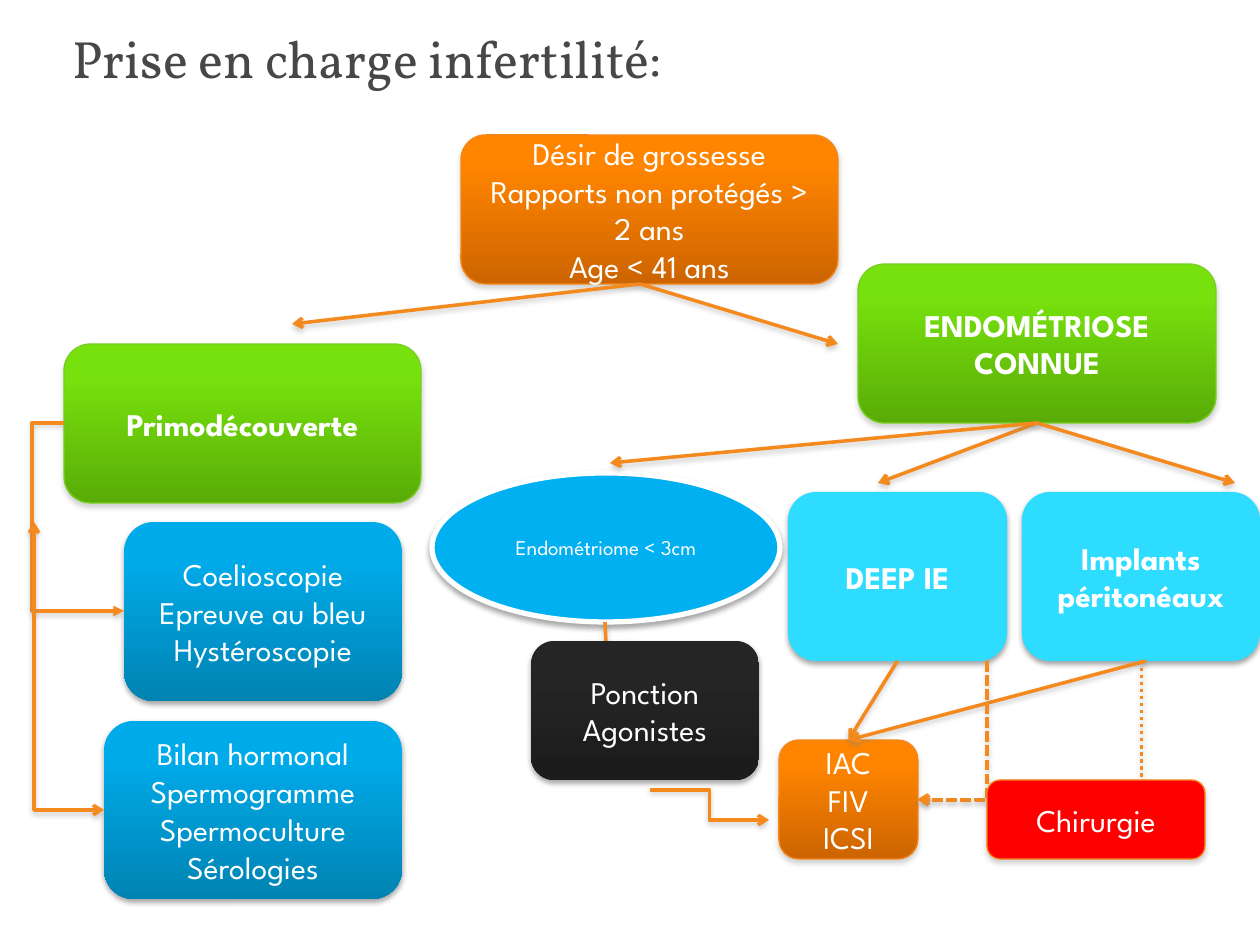
from pptx import Presentation
from pptx.dml.color import RGBColor
from pptx.enum.dml import MSO_LINE
from pptx.enum.shapes import MSO_CONNECTOR as LINK, MSO_SHAPE as SHAPE
from pptx.enum.text import MSO_ANCHOR as ANCHOR, PP_ALIGN as ALIGN
from pptx.oxml.ns import qn
from pptx.util import Emu, Pt
from lxml.etree import SubElement

PX = 914400 // 126
TOP, BOTTOM = 0, 2
COLORS = {
    "title": "474747", "white": "FFFFFF", "link": "F4891E",
    "orange": "FF8500", "orange_dark": "CD6400", "orange_edge": "F48618",
    "green": "77E10D", "green_dark": "59AC07", "green_edge": "78CE22",
    "blue": "00ABE9", "blue_dark": "0083B3",
    "black": "252525", "black_dark": "1C1C1C",
    "sky": "00B0F0", "cyan": "2EDCFF", "red": "FF0000",
    "shadow": "000000", "shadow_soft": "808080",
}
# Each style: fill colours from top to bottom, edge, edge width, shadow
STYLES = {
    "orange": (("orange", "orange_dark"), "orange_edge", 0.75, "shadow_soft"),
    "green": (("green", "green_dark"), "green_edge", 0.75, "shadow_soft"),
    "blue": (("blue", "blue_dark"), None, 0, "shadow"),
    "black": (("black", "black_dark"), None, 0, "shadow"),
    "sky": (("sky",), "white", 3, "shadow"),
    "cyan": (("cyan",), None, 0, "shadow"),
    "red": (("red",), "orange_edge", 0.75, "shadow_soft"),
}


def px(value):
    return Emu(value * PX)


def rgb(name):
    return RGBColor.from_string(COLORS[name])


def add_shadow(shape, color, alpha=35, distance=1.8):
    effects = SubElement(shape.element.spPr, qn("a:effectLst"))
    shadow = SubElement(effects, qn("a:outerShdw"), blurRad=str(Pt(3.1)),
                        dist=str(Pt(distance)), dir="5400000", rotWithShape="0")
    tint = SubElement(shadow, qn("a:srgbClr"), val=COLORS[color])
    SubElement(tint, qn("a:alpha"), val=str(alpha * 1000))


def write_text(shape, text, size=18, bold=False, color="white",
               font="League Spartan", align=ALIGN.CENTER):
    """Write one paragraph per line of text."""
    frame = shape.text_frame
    frame.word_wrap = True
    frame.vertical_anchor = ANCHOR.MIDDLE
    frame.text = text
    for para in frame.paragraphs:
        para.alignment = align
        for span in para.runs:
            span.font.name = font
            span.font.size = Pt(size)
            span.font.bold = bold
            span.font.color.rgb = rgb(color)


def add_title(page, text):
    box = page.shapes.add_textbox(px(60), px(10), px(1158), px(94))
    write_text(box, text, size=30, color="title", font="Vollkorn", align=ALIGN.LEFT)


def add_box(page, text, style, left, top, width, height,
            kind=SHAPE.ROUNDED_RECTANGLE, **text_format):
    fills, edge, edge_width, shadow = STYLES[style]
    box = page.shapes.add_shape(kind, px(left), px(top), px(width), px(height))
    if len(fills) == 2:
        box.fill.gradient()
        box.fill.gradient_angle = 270
        for stop, position, color in zip(box.fill.gradient_stops, (0.2, 1), fills):
            stop.position = position
            stop.color.rgb = rgb(color)
    else:
        box.fill.solid()
        box.fill.fore_color.rgb = rgb(fills[0])
    if edge:
        box.line.color.rgb = rgb(edge)
        box.line.width = Pt(edge_width)
    else:
        box.line.fill.background()
    add_shadow(box, shadow)
    write_text(box, text, **text_format)
    return box


def add_link(page, start, end, kind=LINK.STRAIGHT, head=None, tail="arrow", dash=None):
    link = page.shapes.add_connector(kind, *map(px, start + end))
    link.line.color.rgb = rgb("link")
    link.line.width = Pt(2)
    if dash:
        link.line.dash_style = dash
    outline = link.element.spPr.find(qn("a:ln"))
    for tag, arrow in (("a:headEnd", head), ("a:tailEnd", tail)):
        if arrow:
            SubElement(outline, qn(tag), type=arrow)
    add_shadow(link, "shadow_soft", alpha=38, distance=1.6)
    return link


def add_step(page, start, end, bend=0.5, tail="arrow"):
    """Link running across, down, then across; bend places the vertical part."""
    link = add_link(page, start, end, LINK.ELBOW, tail=tail)
    guides = link.element.spPr.find(qn("a:prstGeom")).get_or_add_avLst()
    SubElement(guides, qn("a:gd"), name="adj1", fmla=f"val {round(bend * 100000)}")


def add_corner(page, start, end, **link_format):
    """Link running down and then across: a quarter-turned two-part elbow."""
    link = add_link(page, start, end, LINK.ELBOW, **link_format)
    (x1, y1), (x2, y2) = start, end
    across, down = abs(x2 - x1), y2 - y1
    link.left, link.top = px((x1 + x2 - down) // 2), px((y1 + y2 - across) // 2)
    link.width, link.height = px(down), px(across)
    link.element.spPr.find(qn("a:prstGeom")).set("prst", "bentConnector2")
    frame = link.element.spPr.find(qn("a:xfrm"))
    frame.attrib.pop("flipH", None)
    if x2 > x1:
        frame.set("flipH", "1")
    frame.set("rot", str((270 if x2 > x1 else 90) * 60000))


def main():
    deck = Presentation()
    deck.slide_width, deck.slide_height = px(1260), px(945)
    page = deck.slides.add_slide(deck.slide_layouts[6])

    add_title(page, "Prise en charge infertilité:")
    add_box(page, "Désir de grossesse\nRapports non protégés > 2 ans\nAge < 41 ans",
            "orange", 461, 135, 377, 149)
    add_box(page, "Primodécouverte", "green", 64, 344, 357, 159, bold=True)
    add_box(page, "Coelioscopie\nEpreuve au bleu\nHystéroscopie",
            "blue", 124, 522, 278, 179)
    known = add_box(page, "ENDOMÉTRIOSE CONNUE", "green", 858, 264, 358, 159, bold=True)
    add_box(page, "Bilan hormonal\nSpermogramme\nSpermoculture\nSérologies",
            "blue", 104, 721, 298, 178)
    add_box(page, "Endométriome < 3cm", "sky", 432, 473, 348, 149,
            kind=SHAPE.OVAL, size=12)
    add_link(page, (605, 622), (610, 721))
    add_box(page, "Ponction\nAgonistes", "black", 531, 641, 228, 139)
    deep = add_box(page, "DEEP IE", "cyan", 788, 492, 219, 169, bold=True)
    assisted = add_box(page, "IAC\nFIV\nICSI", "orange", 779, 740, 139, 119)
    add_box(page, "Implants péritonéaux", "cyan", 1022, 492, 238, 169, bold=True)

    add_step(page, (650, 790), (769, 820))
    deep_link = add_link(page, (898, 661), (848, 740))
    deep_link.begin_connect(deep, BOTTOM)
    implant_link = add_link(page, (1146, 661), (848, 740))
    for link in (deep_link, implant_link):
        link.end_connect(assisted, TOP)
    add_corner(page, (987, 661), (918, 800), dash=MSO_LINE.SQUARE_DOT)
    # python-pptx names the plain "dot" preset ROUND_DOT's neighbour differently
    add_corner(page, (1142, 661), (918, 800), dash=MSO_LINE.ROUND_DOT)
    add_box(page, "Chirurgie", "red", 987, 780, 218, 79)

    for end in ((292, 324), (838, 344)):
        add_link(page, (640, 284), end)
    for end in ((878, 483), (1235, 483), (610, 463)):
        add_link(page, (1037, 423), end).begin_connect(known, BOTTOM)
    add_step(page, (64, 423), (124, 611), bend=-0.53, tail="triangle")
    add_corner(page, (34, 522), (104, 810), head="arrow")

    deck.save("out.pptx")


if __name__ == "__main__":
    main()
